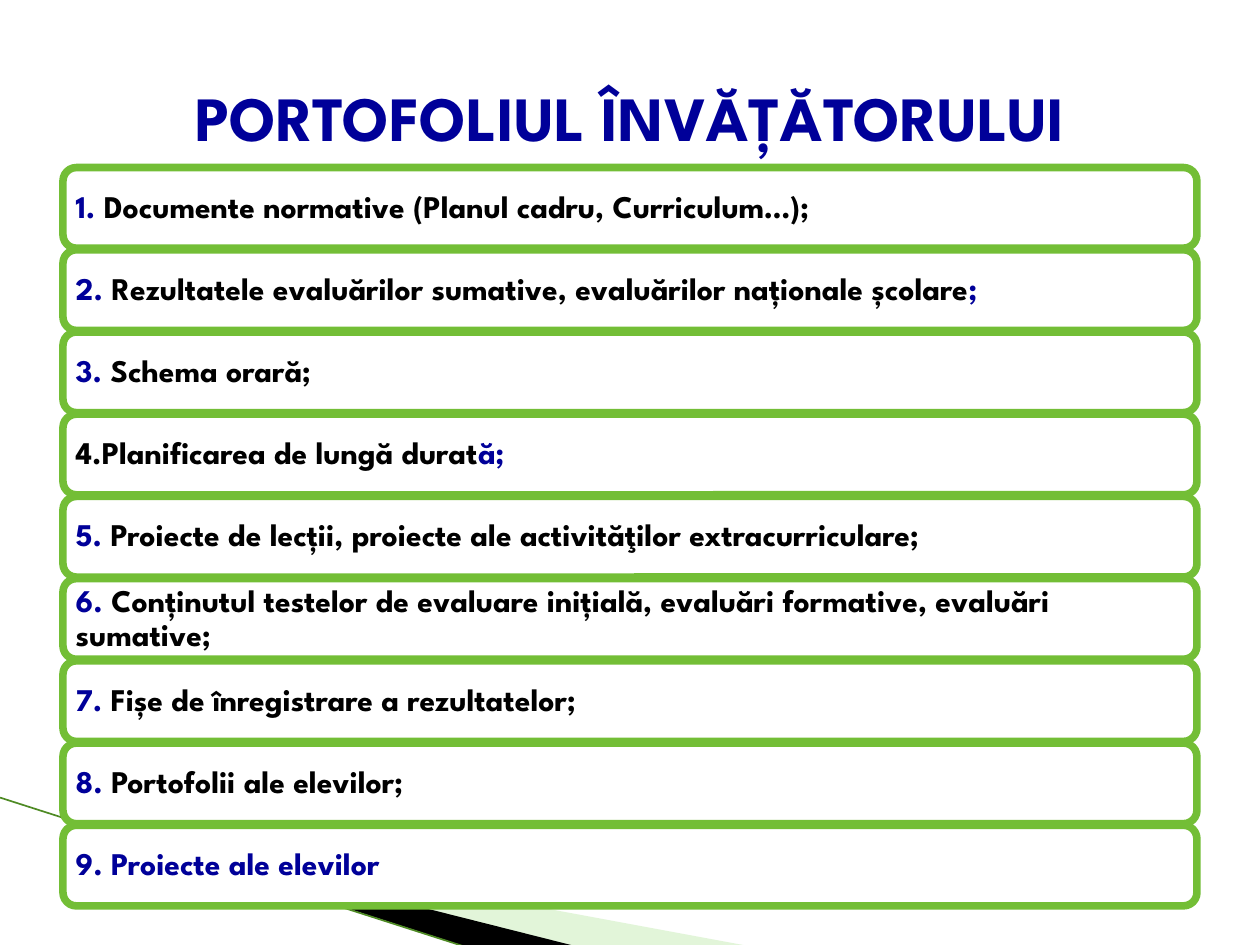
import dataclasses

import lxml.etree
import pptx
import pptx.dml.color
import pptx.enum.shapes
import pptx.enum.text
import pptx.oxml.ns
import pptx.util

RGB = pptx.dml.color.RGBColor
BLUE = RGB(0x00, 0x00, 0x99)
BLACK = RGB(0x00, 0x00, 0x00)
WHITE = RGB(0xFF, 0xFF, 0xFF)
GREEN = RGB(0x73, 0xBE, 0x36)
PALE = RGB(0xB8, 0xE7, 0xA1)
MOSS = RGB(0x4E, 0x8A, 0x24)

WIDE, HIGH = pptx.util.Inches(10), pptx.util.Inches(7.5)
LEFT, SPAN = 0.05 * WIDE, 0.9 * WIDE
TOP = pptx.util.Inches(1.33)
STEP = pptx.util.Inches(0.6525)
TALL = pptx.util.Inches(0.64)
FONT = {"name": "League Spartan", "bold": True}
INSET = pptx.util.Inches(0.07)
FRAME = {
    "word_wrap": True,
    "vertical_anchor": pptx.enum.text.MSO_ANCHOR.MIDDLE,
    "margin_left": INSET,
    "margin_right": INSET,
    "margin_top": INSET,
    "margin_bottom": INSET,
}


@dataclasses.dataclass
class Item:
    """One row: blue lead, black body, blue tail."""
    lead: str = ""
    body: str = ""
    tail: str = ""


@dataclasses.dataclass
class Wedge:
    points: list[tuple[float, float]]
    fill: RGB
    alpha: int = 100


WEDGES = [
    Wedge([(0.55, 6.51), (5.95, 7.51), (4.56, 7.51)], PALE, 40),
    Wedge([(0.53, 6.49), (4.57, 7.51), (3.72, 7.52)], BLACK),
]

ITEMS = [
    Item("1.", " Documente normative (Planul cadru, Curriculum…);"),
    Item("2. ", "Rezultatele evaluărilor sumative, evaluărilor naționale școlare", ";"),
    Item("3. ", "Schema orară;"),
    Item("", "4.Planificarea de lungă durat", "ă;"),
    Item("5. ", "Proiecte de lecții, proiecte ale activităţilor extracurriculare;"),
    Item("6. ", "Conținutul testelor de evaluare inițială, evaluări formative, "
         "evaluări sumative;"),
    Item("7. ", "Fișe de înregistrare a rezultatelor;"),
    Item("8. ", "Portofolii ale elevilor;"),
    Item("9. Proiecte ale elevilor"),
]


def apply(target: object, values: dict) -> None:
    for name, value in values.items():
        setattr(target, name, value)


def add_run(para, text: str, size: float, color: RGB) -> None:
    run = para.add_run()
    run.text = text
    apply(run.font, {**FONT, "size": pptx.util.Pt(size)})
    run.font.color.rgb = color


def add_wedge(shapes, wedge: Wedge) -> None:
    first, *rest = [(pptx.util.Inches(x), pptx.util.Inches(y))
                    for x, y in wedge.points]
    pen = shapes.build_freeform(*first)
    pen.add_line_segments(rest)
    shape = pen.convert_to_shape()
    shape.shadow.inherit = False
    shape.line.fill.background()
    shape.fill.solid()
    shape.fill.fore_color.rgb = wedge.fill
    if wedge.alpha < 100:
        color = shape.fill._xPr.find(".//" + pptx.oxml.ns.qn("a:srgbClr"))
        lxml.etree.SubElement(color, pptx.oxml.ns.qn("a:alpha"),
                              val=str(wedge.alpha * 1000))


def add_edge(shapes) -> None:
    """Draw the thin slanted line at the lower left."""
    edge = shapes.add_connector(
        pptx.enum.shapes.MSO_CONNECTOR.STRAIGHT, 0, pptx.util.Inches(6.33),
        pptx.util.Inches(3.71), pptx.util.Inches(7.52))
    edge.line.color.rgb = MOSS
    edge.line.width = pptx.util.Pt(0.95)
    lxml.etree.SubElement(edge._element.spPr, pptx.oxml.ns.qn("a:effectLst"))


def add_item(shapes, row: int, item: Item) -> None:
    box = shapes.add_shape(
        pptx.enum.shapes.MSO_SHAPE.ROUNDED_RECTANGLE,
        int(LEFT), int(TOP + row * STEP), int(SPAN), TALL)
    box.shadow.inherit = False
    box.fill.solid()
    box.fill.fore_color.rgb = WHITE
    box.line.color.rgb = GREEN
    box.line.width = pptx.util.Pt(4.33)
    apply(box.text_frame, FRAME)
    para = box.text_frame.paragraphs[0]
    apply(para, {"alignment": pptx.enum.text.PP_ALIGN.LEFT, "line_spacing": 0.9})
    for text, color in ((item.lead, BLUE), (item.body, BLACK), (item.tail, BLUE)):
        if text:
            add_run(para, text, 18, color)


def set_title(title, text: str) -> None:
    apply(title, {"left": int(LEFT), "top": int(0.04 * HIGH),
                  "width": int(SPAN), "height": pptx.util.Inches(1.25)})
    title.text_frame.vertical_anchor = pptx.enum.text.MSO_ANCHOR.MIDDLE
    para = title.text_frame.paragraphs[0]
    para.alignment = pptx.enum.text.PP_ALIGN.CENTER
    add_run(para, text, 36, BLUE)


def main() -> None:
    deck = pptx.Presentation()
    apply(deck, {"slide_width": WIDE, "slide_height": HIGH})
    slide = deck.slides.add_slide(deck.slide_layouts[5])
    set_title(slide.shapes.title, "PORTOFOLIUL ÎNVĂȚĂTORULUI")
    for wedge in WEDGES:
        add_wedge(slide.shapes, wedge)
    add_edge(slide.shapes)
    for row, item in enumerate(ITEMS):
        add_item(slide.shapes, row, item)
    deck.save("out.pptx")


if __name__ == "__main__":
    main()
